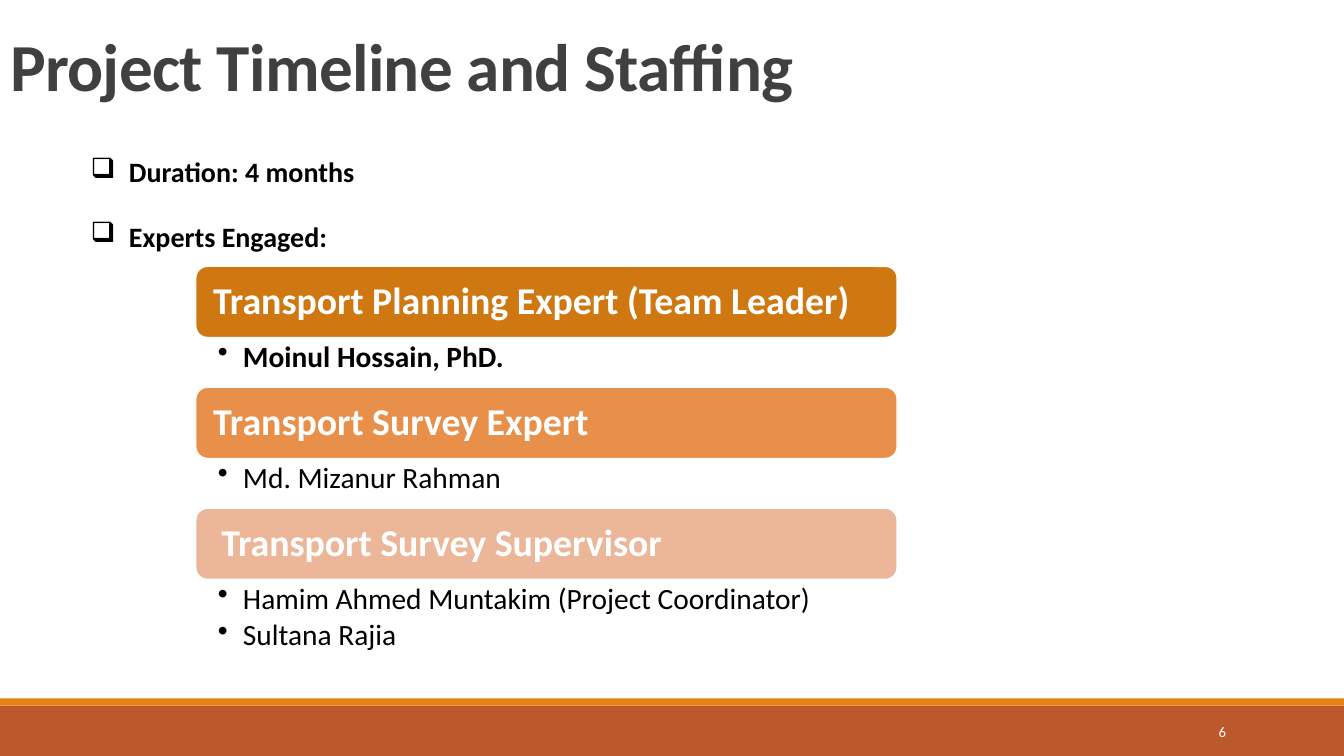
from lxml.etree import SubElement
from pptx import Presentation
from pptx.dml.color import RGBColor
from pptx.enum.shapes import MSO_SHAPE
from pptx.enum.text import MSO_ANCHOR, MSO_AUTO_SIZE, PP_ALIGN
from pptx.oxml.ns import qn
from pptx.util import Inches, Pt

FONT = "Calibri"
COLORS = {
    "white": "FFFFFF", "black": "000000", "title": "404040",
    "footer": "BD582C", "stripe": "E48312",
    "leader": "CF7710", "survey": "E8904A", "supervisor": "ECB698",
}
# Heading, colour, extra left inset, names, names in bold
ROLES = [
    ("Transport Planning Expert (Team Leader)", "leader", 0,
     ["Moinul Hossain, PhD."], True),
    ("Transport Survey Expert", "survey", 0, ["Md. Mizanur Rahman"], False),
    ("Transport Survey Supervisor", "supervisor", 0.08,
     ["Hamim Ahmed Muntakim (Project Coordinator)", "Sultana Rajia"], False),
]


def color(name):
    return RGBColor.from_string(COLORS[name])


def style(paragraph, size, color_name, bold=False):
    font = paragraph.font
    font.name, font.size, font.bold = FONT, Pt(size), bold
    font.color.rgb = color(color_name)


def set_frame(frame, anchor=MSO_ANCHOR.TOP, insets=(0.1, 0.05, 0.1, 0.05)):
    frame.word_wrap = True
    frame.auto_size = MSO_AUTO_SIZE.NONE
    frame.vertical_anchor = anchor
    (frame.margin_left, frame.margin_top,
     frame.margin_right, frame.margin_bottom) = map(Inches, insets)


def add_box(slide, preset, left, top, width, height, fill, outline=None):
    shape = slide.shapes.add_shape(
        preset, Inches(left), Inches(top), Inches(width), Inches(height))
    shape.shadow.inherit = False
    shape.fill.solid()
    shape.fill.fore_color.rgb = color(fill)
    if outline:
        shape.line.color.rgb = color(outline)
        shape.line.width = Pt(1.25)
    else:
        shape.line.fill.background()
    return shape


def add_text(slide, left, top, width, height, **frame_options):
    box = slide.shapes.add_textbox(
        Inches(left), Inches(top), Inches(width), Inches(height))
    set_frame(box.text_frame, **frame_options)
    return box.text_frame


def add_bullets(frame, texts, bullet, indent, size, bold, line_spacing, space_after):
    for number, text in enumerate(texts):
        paragraph = frame.add_paragraph() if number else frame.paragraphs[0]
        paragraph.text = text
        style(paragraph, size, "black", bold)
        paragraph.line_spacing = line_spacing
        paragraph.space_after = Pt(space_after)
        properties = paragraph._p.get_or_add_pPr()
        properties.set("marL", str(Inches(indent)))
        properties.set("indent", str(-Inches(indent)))
        # The bullet goes after the spacing and before the default run properties
        mark = SubElement(properties, qn("a:buChar"))
        mark.set("char", bullet)
        defaults = properties.find(qn("a:defRPr"))
        if defaults is not None:
            defaults.addprevious(mark)


def add_title(slide, left, top, width, height):
    title = slide.shapes.title
    title.left, title.top = Inches(left), Inches(top)
    title.width, title.height = Inches(width), Inches(height)
    set_frame(title.text_frame, MSO_ANCHOR.BOTTOM)
    paragraph = title.text_frame.paragraphs[0]
    paragraph.text = "Project Timeline and Staffing"
    paragraph.alignment = PP_ALIGN.LEFT
    paragraph.line_spacing = 0.85
    style(paragraph, 48, "title", bold=True)
    paragraph.runs[0].font._element.set("spc", "-50")


def add_footer(slide, left, top, width, height):
    stripe = 0.07
    add_box(slide, MSO_SHAPE.RECTANGLE, left, top + stripe, width,
            height - stripe, "footer")
    add_box(slide, MSO_SHAPE.RECTANGLE, left, top, width, stripe, "stripe")
    frame = add_text(slide, left + 10.83, top + 0.13, 1.43, 0.4,
                     anchor=MSO_ANCHOR.MIDDLE)
    paragraph = frame.paragraphs[0]
    paragraph.text = "6"
    paragraph.alignment = PP_ALIGN.RIGHT
    style(paragraph, 10.5, "white")


def add_summary(slide, left, top, width, height):
    frame = add_text(slide, left, top, width, height)
    add_bullets(frame, ["Duration: 4 months", "Experts Engaged:"], "❑",
                indent=0.38, size=20, bold=True, line_spacing=1.5, space_after=10)


def add_roles(slide, left, top, width):
    heading_height, pitch = 0.71, 1.2
    for number, (heading, fill, extra, names, bold) in enumerate(ROLES):
        row_top = top + number * pitch
        bar = add_box(slide, MSO_SHAPE.ROUNDED_RECTANGLE, left, row_top, width,
                      heading_height, fill, outline="white")
        set_frame(bar.text_frame, MSO_ANCHOR.MIDDLE, (0.14 + extra, 0.05, 0.14, 0.05))
        paragraph = bar.text_frame.paragraphs[0]
        paragraph.text = heading
        paragraph.alignment = PP_ALIGN.LEFT
        paragraph.line_spacing = 0.9
        style(paragraph, 27, "white", bold=True)
        frame = add_text(slide, left, row_top + heading_height, width,
                         0.19 + 0.3 * len(names), insets=(0.22, 0.04, 0.21, 0.04))
        add_bullets(frame, names, "•", indent=0.25, size=21, bold=bold,
                    line_spacing=0.9, space_after=3.5)


def main():
    presentation = Presentation()
    presentation.slide_width = Inches(13.33)
    presentation.slide_height = Inches(7.5)
    slide = presentation.slides.add_slide(presentation.slide_layouts[5])
    add_footer(slide, 0, 6.93, 13.33, 0.57)
    add_title(slide, 0, 0.16, 11, 0.93)
    add_summary(slide, 0.8, 1.32, 9.71, 1.9)
    add_roles(slide, 1.94, 2.64, 6.96)
    presentation.save("out.pptx")


if __name__ == "__main__":
    main()
